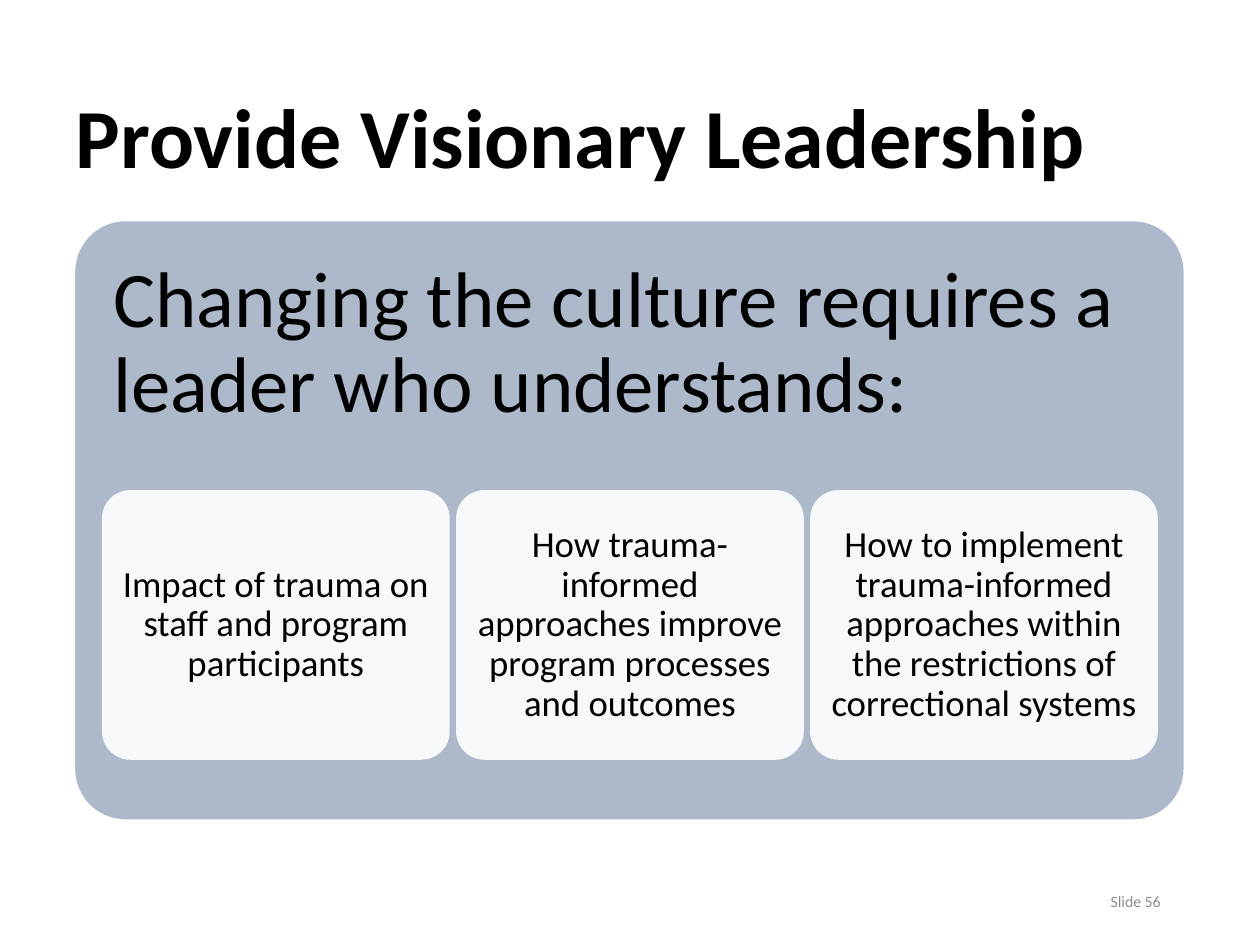
from lxml.etree import SubElement
from pptx import Presentation
from pptx.dml.color import RGBColor
from pptx.enum.shapes import MSO_SHAPE as Shape
from pptx.enum.text import MSO_ANCHOR as Anchor, PP_ALIGN as Align
from pptx.oxml.ns import qn
from pptx.util import Inches, Pt


def color(value):
    """Turn a hex string into a colour."""
    return RGBColor.from_string(value)


def apply(target, values):
    """Set each attribute of the target from a dict."""
    for name, value in values.items():
        setattr(target, name, value)


class SlideBuilder:
    """Hold the style and the current slide."""

    font_name = "Calibri"
    ink = "000000"

    def __init__(self, presentation):
        """Add a title-only slide."""
        self.slide = presentation.slides.add_slide(presentation.slide_layouts[5])

    def set_text(self, shape, text, size, ink=ink, bold=False, align=Align.LEFT,
                 anchor=Anchor.MIDDLE, spacing=0.9, insets=(0.1, 0.05, 0.1, 0.05)):
        """Fill a shape with one styled paragraph."""
        frame = shape.text_frame
        sides = ("margin_left", "margin_top", "margin_right", "margin_bottom")
        apply(frame, {"word_wrap": True, "vertical_anchor": anchor})
        apply(frame, dict(zip(sides, map(Inches, insets))))
        paragraph = frame.paragraphs[0]
        apply(paragraph, {"alignment": align, "line_spacing": spacing})
        run = paragraph.add_run()
        run.text = text
        apply(run.font, {"name": self.font_name, "size": Pt(size), "bold": bold})
        run.font.color.rgb = color(ink)

    def title(self, text, box, size):
        """Place and format the title placeholder."""
        title = self.slide.shapes.title
        apply(title, dict(zip(("left", "top", "width", "height"), map(Inches, box))))
        self.set_text(title, text, size, bold=True)

    def card(self, text, box, size, fill, radius, alpha=None, outline=None, **style):
        """Add a rounded rectangle with text."""
        card = self.slide.shapes.add_shape(Shape.ROUNDED_RECTANGLE, *map(Inches, box))
        card.adjustments[0] = radius
        card.shadow.inherit = False
        card.fill.solid()
        card.fill.fore_color.rgb = color(fill)
        if alpha:
            tint = card.element.spPr.find(qn("a:solidFill"))[0]
            SubElement(tint, qn("a:alpha"), val=str(alpha * 1000))
        if outline:
            card.line.color.rgb = color(outline)
            card.line.width = Pt(1)
        else:
            card.line.fill.background()
        self.set_text(card, text, size, **style)

    def label(self, text, box, size, **style):
        """Add a plain text box."""
        self.set_text(self.slide.shapes.add_textbox(*map(Inches, box)), text, size, **style)


def main():
    """Build and save the slide."""
    presentation = Presentation()
    apply(presentation, {"slide_width": Inches(10), "slide_height": Inches(7.5)})
    builder = SlideBuilder(presentation)
    builder.title("Provide Visionary Leadership", (0.5, 0.75, 9, 0.75), 48)
    builder.card("Changing the culture requires a leader who understands:",
                 (0.59, 1.75, 8.81, 4.76), 45, "ADB9CA", 0.085, outline="FFFFFF",
                 anchor=Anchor.TOP, insets=(0.19, 0.19, 0.19, 2.94))
    topics = (
        "Impact of trauma on staff and program participants",
        "How trauma-informed approaches improve program processes and outcomes",
        "How to implement trauma-informed approaches within the restrictions of "
        "correctional systems",
    )
    left, width, gap = 0.81, 2.76, 0.05
    for index, topic in enumerate(topics):
        builder.card(topic, (left + index * (width + gap), 3.89, width, 2.14), 21,
                     "FFFFFF", 0.105, alpha=90, align=Align.CENTER, insets=(0.09,) * 4)
    builder.label("Slide 56", (7.06, 6.95, 2.25, 0.4), 9, ink="8C8C8C",
                  align=Align.RIGHT, spacing=1.0)
    presentation.save("out.pptx")


if __name__ == "__main__":
    main()
